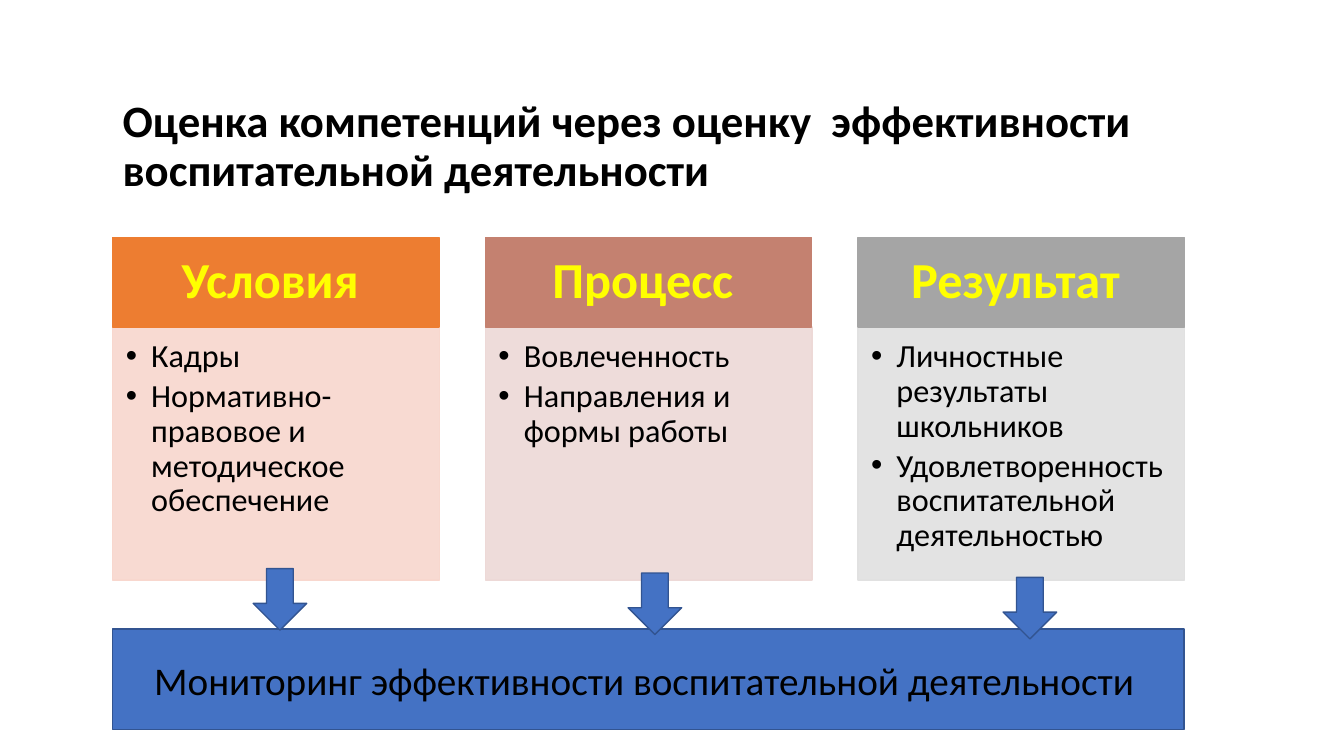
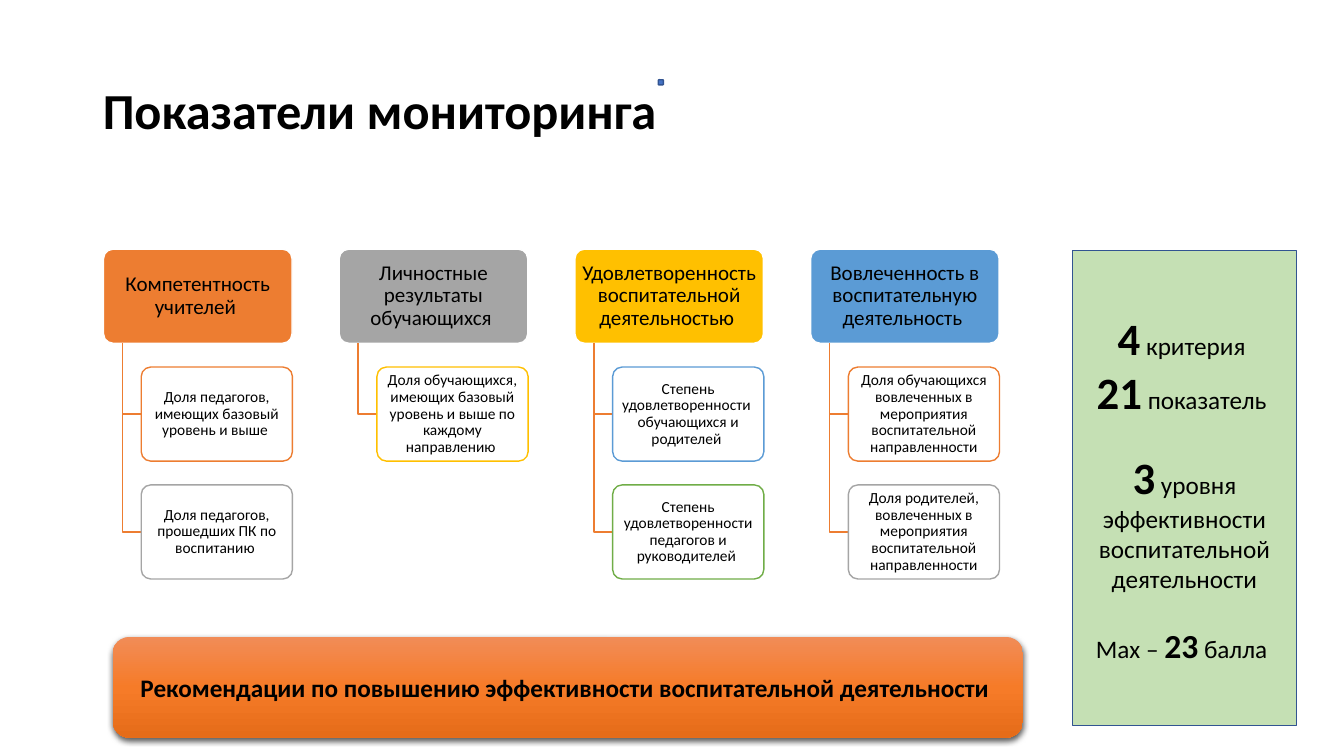
"""Build two slides on how the quality of school upbringing work is assessed."""
import pptx
import pptx.util
import pptx.dml.color
import pptx.enum.shapes
import pptx.enum.text
import pptx.oxml
import pptx.oxml.ns

Cm, Pt = pptx.util.Cm, pptx.util.Pt
RGBColor = pptx.dml.color.RGBColor
KIND = pptx.enum.shapes.MSO_SHAPE
ALIGN = pptx.enum.text.PP_ALIGN
ANCHOR = pptx.enum.text.MSO_ANCHOR
qn = pptx.oxml.ns.qn

FONT = "Calibri"
BLACK = RGBColor(0, 0, 0)
WHITE = RGBColor(255, 255, 255)
YELLOW = RGBColor(255, 255, 0)
ORANGE = RGBColor(0xED, 0x7D, 0x31)
BRICK = RGBColor(0xC4, 0x81, 0x70)
GRAY = RGBColor(0xA5, 0xA5, 0xA5)
GOLD = RGBColor(0xFF, 0xC0, 0x00)
SKY = RGBColor(0x5B, 0x9B, 0xD5)
GREEN = RGBColor(0x70, 0xAD, 0x47)
MINT = RGBColor(0xC5, 0xE0, 0xB4)
BLUE = RGBColor(0x44, 0x72, 0xC4)
NAVY = RGBColor(0x32, 0x54, 0x91)
PEACH = RGBColor(0xF8, 0xD7, 0xCE)
ROSE = RGBColor(0xED, 0xD9, 0xD7)
PALE = RGBColor(0xE1, 0xE1, 0xE1)

PARTS = [
    ("Условия ", ORANGE, PEACH,
     ["Кадры", "Нормативно-правовое и методическое обеспечение"]),
    ("Процесс ", BRICK, ROSE,
     ["Вовлеченность", "Направления и формы работы"]),
    ("Результат ", GRAY, PALE,
     ["Личностные результаты школьников",
      "Удовлетворенность воспитательной деятельностью"]),
]
TREES = [
    ("Компетентность учителей ", ORANGE,
     [("Доля педагогов, имеющих базовый уровень и выше ", ORANGE),
      ("Доля педагогов, прошедших ПК по воспитанию ", GRAY)]),
    ("Личностные результаты обучающихся ", GRAY,
     [("Доля обучающихся, имеющих базовый уровень и выше по каждому "
       "направлению ", GOLD)]),
    ("Удовлетворенность воспитательной деятельностью ", GOLD,
     [("Степень удовлетворенности  обучающихся и родителей ", SKY),
      ("Степень удовлетворенности педагогов и руководителей ", GREEN)]),
    ("Вовлеченность в воспитательную деятельность ", SKY,
     [("Доля обучающихся вовлеченных в мероприятия воспитательной "
       "направленности", ORANGE),
      ("Доля родителей, вовлеченных в мероприятия воспитательной "
       "направленности", GRAY)]),
]
FACTS = [
    (0, [("4", 32, True), (" критерия ", 18, False)]),
    (0, [("21", 32, True), (" показатель ", 18, False)]),
    (22, [("3", 32, True),
          (" уровня эффективности воспитательной деятельности", 18, False)]),
    (22, [("Мах – ", 18, False), ("23", 24, True), (" балла ", 18, False)]),
]


def add_run(para, text, size, bold=False, color=BLACK):
    """Add one run of text."""
    run = para.add_run()
    run.text = text
    font = run.font
    font.name, font.size, font.bold = FONT, Pt(size), bold
    font.color.rgb = color


def set_para(para, align, lead=1.0, before=0, after=0):
    """Set the alignment and spacing of a paragraph."""
    para.alignment = align
    para.line_spacing = lead
    para.space_before, para.space_after = Pt(before), Pt(after)


def set_frame(frame, anchor, pads=(0.25, 0.13, 0.25, 0.13)):
    """Set the anchor, wrap and insets of a text frame."""
    frame.word_wrap = True
    frame.auto_size = pptx.enum.text.MSO_AUTO_SIZE.NONE
    frame.vertical_anchor = anchor
    (frame.margin_left, frame.margin_top,
     frame.margin_right, frame.margin_bottom) = map(Cm, pads)


def place(shape, box):
    """Move and size a shape in centimetres."""
    shape.left, shape.top, shape.width, shape.height = map(Cm, box)


def paint(shape, fill, line, alpha=None):
    """Fill and outline a shape, with an optional fill opacity."""
    shape.fill.solid()
    shape.fill.fore_color.rgb = fill
    if alpha:
        clr = shape._element.spPr.find(qn("a:solidFill"))[0]
        clr.append(make_xml(f'<a:alpha %s val="{alpha * 1000}"/>'))
    if line is None:
        shape.line.fill.background()
    else:
        shape.line.color.rgb = line
        shape.line.width = Pt(1)


def make_xml(text):
    """Parse drawing markup, with its namespace put in at the mark."""
    return pptx.oxml.parse_xml(text.replace("%s", pptx.oxml.ns.nsdecls("a")))


def add_box(slide, kind, box, fill, line, round_by=None, alpha=None):
    """Add a flat preset shape."""
    shape = slide.shapes.add_shape(kind, *map(Cm, box))
    shape.shadow.inherit = False
    paint(shape, fill, line, alpha)
    if round_by:
        shape.adjustments[0] = round_by
    return shape


def add_label(shape, text, size, bold=False, color=BLACK, lead=1.0,
              pads=(0.25, 0.13, 0.25, 0.13)):
    """Write one centred line of text in a shape."""
    set_frame(shape.text_frame, ANCHOR.MIDDLE, pads)
    para = shape.text_frame.paragraphs[0]
    set_para(para, ALIGN.CENTER, lead)
    add_run(para, text, size, bold, color)


def add_title(slide, text, size, box):
    """Fill the title placeholder."""
    title = slide.shapes.title
    place(title, box)
    set_frame(title.text_frame, ANCHOR.MIDDLE)
    para = title.text_frame.paragraphs[0]
    set_para(para, ALIGN.LEFT, 0.9)
    add_run(para, text, size, True)


def fill_list(body, items, tint, box):
    """Turn a body placeholder into a tinted bullet list."""
    place(body, box)
    paint(body, tint, tint, 90)
    frame = body.text_frame
    set_frame(frame, ANCHOR.TOP, (0.33, 0.33, 0.46, 0.5))
    for num, item in enumerate(items):
        para = frame.add_paragraph() if num else frame.paragraphs[0]
        set_para(para, ALIGN.LEFT, 0.9, after=3.5)
        props = para._p.get_or_add_pPr()
        props.set("marL", str(Cm(0.64)))
        props.set("indent", str(Cm(-0.64)))
        props.append(make_xml('<a:buFont %s typeface="Arial"/>'))
        props.append(make_xml('<a:buChar %s char="•"/>'))
        add_run(para, item, 23)


def add_part(slide, body, part, box):
    """Add a headed column with its list."""
    name, color, tint, items = part
    left, top, width, height = box
    cap = 2.25
    fill_list(body, items, tint, (left, top + cap, width, height - cap))
    head = add_box(slide, KIND.RECTANGLE, (left, top, width, cap), color, color)
    add_label(head, name, 36, True, YELLOW, 0.9, (0.71, 0.41, 0.71, 0.41))


def add_elbow(slide, left, top, width, height):
    """Draw a line that goes down and then right."""
    pen = slide.shapes.build_freeform(Cm(left), Cm(top))
    pen.add_line_segments([(Cm(left), Cm(top + height)),
                           (Cm(left + width), Cm(top + height))], close=False)
    elbow = pen.convert_to_shape()
    elbow.shadow.inherit = False
    elbow.fill.background()
    elbow.line.color.rgb = ORANGE
    elbow.line.width = Pt(1)


def add_tree(slide, tree, box):
    """Add a heading with its leaves hung below it."""
    name, color, leaves = tree
    left, top, width, height = box
    step, inset = 2.97, 0.95
    stem = left + inset / 2
    head = add_box(slide, KIND.ROUNDED_RECTANGLE, box, color, WHITE, 0.1)
    add_label(head, name, 15, lead=0.9, pads=(0.07, 0.05, 0.07, 0.05))
    for num, (text, edge) in enumerate(leaves, 1):
        down = top + step * num
        add_elbow(slide, stem, top + height, inset / 2, down - top - height / 2)
        leaf = add_box(slide, KIND.ROUNDED_RECTANGLE,
                       (left + inset, down, width - inset + 0.01, height),
                       WHITE, edge, 0.1, 90)
        add_label(leaf, text, 11, lead=0.9, pads=(0.05,) * 4)


def add_facts(slide, box):
    """Add the side panel of totals."""
    panel = add_box(slide, KIND.RECTANGLE, box, MINT, NAVY)
    frame = panel.text_frame
    set_frame(frame, ANCHOR.MIDDLE)
    for num, (gap, runs) in enumerate(FACTS):
        para = frame.add_paragraph() if num else frame.paragraphs[0]
        set_para(para, ALIGN.CENTER, before=gap)
        for run in runs:
            add_run(para, *run)


def add_advice(slide, box):
    """Add the glossy banner with a soft shadow."""
    banner = add_box(slide, KIND.ROUNDED_RECTANGLE, box, ORANGE, None)
    props = banner._element.spPr
    stops = "".join(
        f'<a:gs pos="{pos}"><a:srgbClr val="{val}"/></a:gs>'
        for pos, val in ((0, "F18C57"), (50000, "F67B28"), (100000, "E56C19")))
    props.replace(props.find(qn("a:solidFill")), make_xml(
        f'<a:gradFill %s rotWithShape="1"><a:gsLst>{stops}</a:gsLst>'
        '<a:lin ang="5400000" scaled="0"/></a:gradFill>'))
    props.find(qn("a:effectLst")).append(make_xml(
        f'<a:outerShdw %s blurRad="{Pt(4.5)}" dist="{Pt(1.5)}" dir="5400000" '
        'algn="ctr" rotWithShape="0"><a:srgbClr val="000000">'
        '<a:alpha val="63000"/></a:srgbClr></a:outerShdw>'))
    add_label(banner, "Рекомендации по повышению эффективности "
              "воспитательной деятельности ", 18, True)


def make_parts(deck):
    """Build the slide of conditions, process and result."""
    slide = deck.slides.add_slide(deck.slide_layouts[4])
    add_title(slide, "Оценка компетенций через оценку  эффективности "
              "воспитательной деятельности", 32, (2.84, 1.63, 28.6, 4.17))
    title, *bodies = list(slide.placeholders)
    for num, (part, body) in enumerate(zip(PARTS, bodies)):
        add_part(slide, body, part, (2.84 + 9.39 * num, 5.99, 8.23, 8.63))
    for spare in bodies[len(PARTS):]:
        spare._element.getparent().remove(spare._element)
    base = add_box(slide, KIND.RECTANGLE, (2.84, 15.85, 27, 2.54), BLUE, NAVY)
    add_label(base, "Мониторинг эффективности воспитательной деятельности ", 28)
    for num in range(len(PARTS)):
        add_box(slide, KIND.DOWN_ARROW,
                (6.38 + 9.45 * num, 14.33 + 0.11 * num, 1.35, 1.55), BLUE, NAVY)


def make_trees(deck):
    """Build the slide of monitoring indicators."""
    slide = deck.slides.add_slide(deck.slide_layouts[5])
    add_title(slide, "Показатели мониторинга", 36, (2.34, 1.02, 29.21, 3.68))
    for num, tree in enumerate(TREES):
        add_tree(slide, tree, (2.61 + 5.94 * num, 6.28, 4.75, 2.37))
    add_facts(slide, (27.03, 6.32, 5.64, 11.96))
    add_box(slide, KIND.ROUNDED_RECTANGLE, (16.59, 2.01, 0.13, 0.13), BLUE, NAVY)
    add_advice(slide, (2.84, 16.05, 22.94, 2.54))


def main():
    """Build and save the deck."""
    deck = pptx.Presentation()
    deck.slide_width, deck.slide_height = Cm(33.87), Cm(19.05)
    make_parts(deck)
    make_trees(deck)
    deck.save("out.pptx")


if __name__ == "__main__":
    main()
